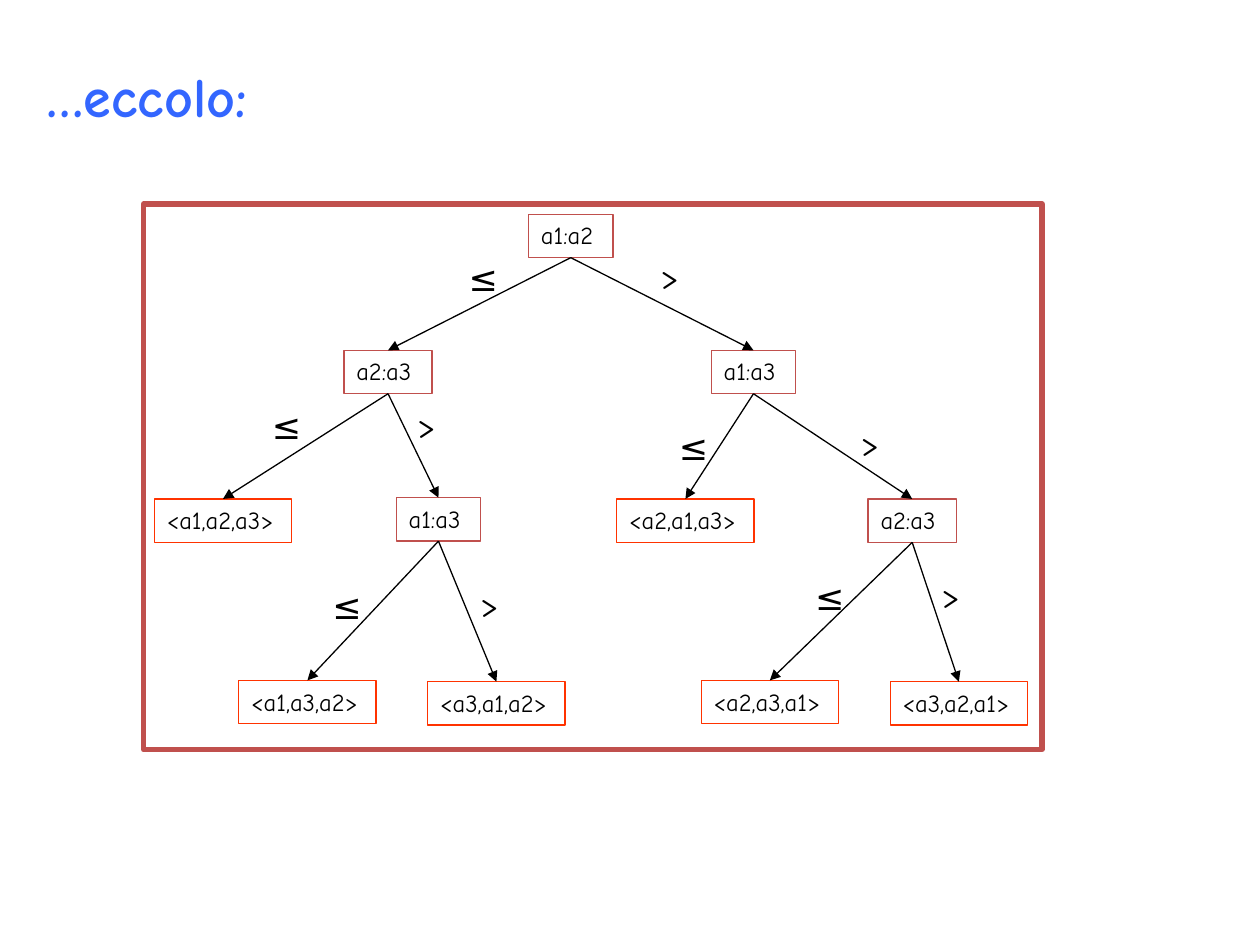
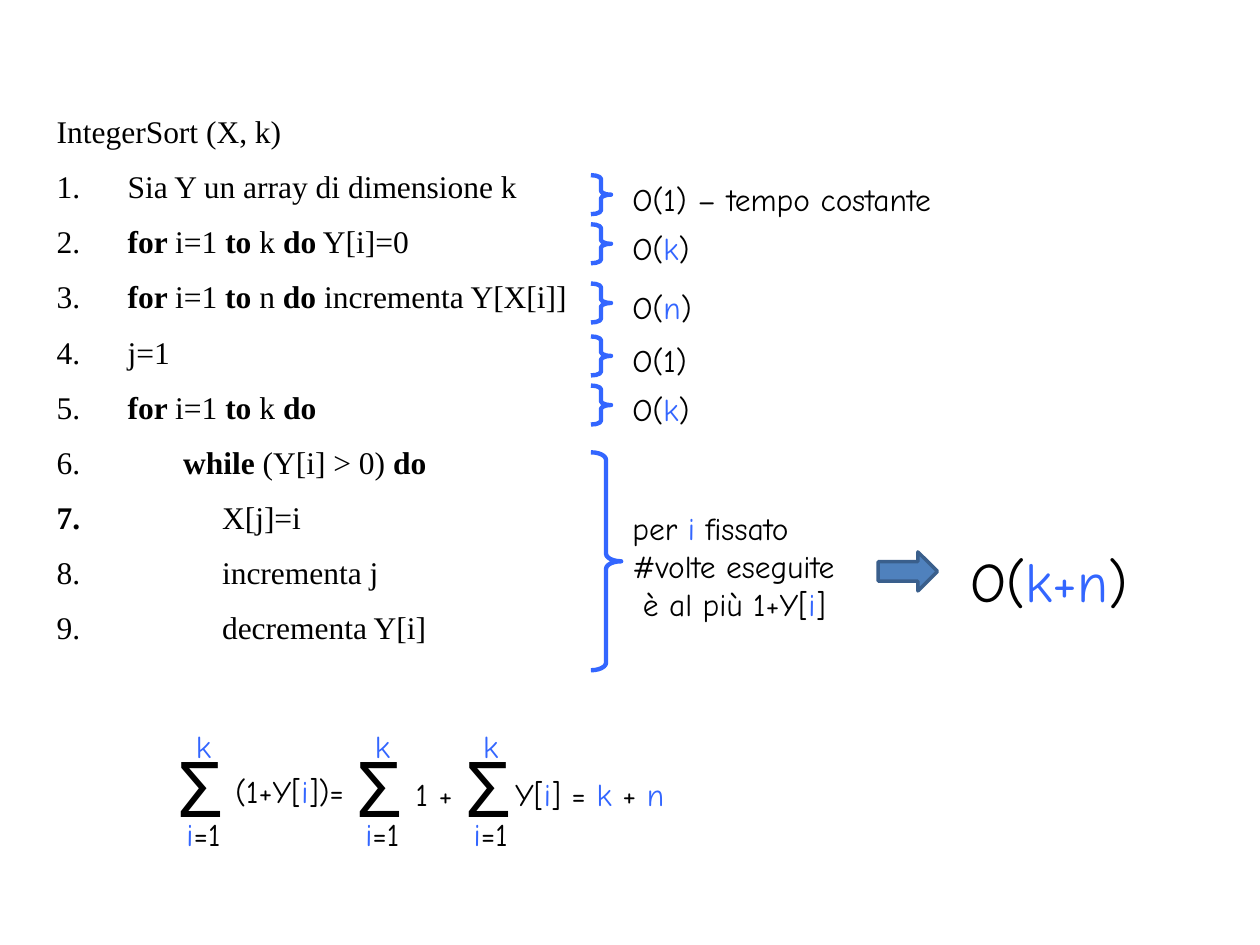
from dataclasses import dataclass

from lxml.etree import SubElement
from pptx import Presentation
from pptx.dml.color import RGBColor
from pptx.enum.shapes import MSO_CONNECTOR, MSO_SHAPE
from pptx.enum.text import MSO_ANCHOR, MSO_AUTO_SIZE, PP_ALIGN
from pptx.oxml.ns import qn
from pptx.util import Inches, Pt

# Places and sizes are columns and rows of a 100 x 75 grid.
CELL = Inches(0.1)
COLUMNS, ROWS = 100, 75

COLORS = {
    "text": "000000",
    "paper": "FFFFFF",
    "accent": "3366FF",
    "frame": "C0504D",
    "leaf": "FF3300",
    "arrow": "4F81BD",
    "arrow edge": "3A5F8C",
}
HAND_FONT, CODE_FONT = "Comic Neue", "Times New Roman"
TITLE_ONLY, TITLE_AND_BODY = 5, 1
BOTTOM, TOP = 2, 0
NODE_HEIGHT = 3.45


@dataclass(frozen=True)
class Node:
    text: str
    center: float
    row: float

    @property
    def is_leaf(self) -> bool:
        return self.text.startswith("<")

    @property
    def width(self) -> float:
        if self.is_leaf:
            return 10.9
        return 7.0 if self.text.startswith("a2") else 6.7


@dataclass(frozen=True)
class Branch:
    parent: str
    child: str
    sign: str
    column: float
    row: float


@dataclass(frozen=True)
class Step:
    text: str
    indent: float = 0.5
    bold_number: bool = False


@dataclass(frozen=True)
class Cost:
    text: str
    row: float


# Keys spell the way down the tree: L for ≤, R for >.
NODES = {
    "": Node("a1:a2", 45.3, 17.0),
    "L": Node("a2:a3", 30.8, 27.8),
    "R": Node("a1:a3", 59.8, 27.8),
    "LL": Node("<a1,a2,a3>", 17.7, 39.6),
    "LR": Node("a1:a3", 34.8, 39.5),
    "RL": Node("<a2,a1,a3>", 54.4, 39.6),
    "RR": Node("a2:a3", 72.4, 39.6),
    "LRL": Node("<a1,a3,a2>", 24.4, 54.0),
    "LRR": Node("<a3,a1,a2>", 39.4, 54.1),
    "RRL": Node("<a2,a3,a1>", 61.1, 54.0),
    "RRR": Node("<a3,a2,a1>", 76.1, 54.1),
}
BRANCHES = [
    Branch("", "L", "≤", 36.2, 19.9),
    Branch("", "R", ">", 51.4, 19.7),
    Branch("L", "LL", "≤", 20.6, 31.6),
    Branch("L", "LR", ">", 32.1, 31.5),
    Branch("R", "RL", "≤", 52.9, 33.3),
    Branch("R", "RR", ">", 67.3, 33.0),
    Branch("LR", "LRL", "≤", 25.4, 45.9),
    Branch("LR", "LRR", ">", 37.1, 45.7),
    Branch("RR", "RRL", "≤", 63.7, 45.2),
    Branch("RR", "RRR", ">", 73.7, 45.0),
]

STEPS = [
    Step("Sia Y un array di dimensione k"),
    Step("|for |i=1 |to| k |do| Y[i]=0"),
    Step("|for |i=1| to |n| do |incrementa Y[X[i]]"),
    Step("j=1"),
    Step("|for |i=1 |to| k |do"),
    Step("|while| (Y[i] > 0) |do", indent=0.94),
    Step("X[j]=i", indent=1.25, bold_number=True),
    Step("incrementa j", indent=1.25),
    Step("decrementa Y[i]", indent=1.25),
]
COSTS = [
    Cost("O(1) – tempo costante", 13.9),
    Cost("O(|k|)", 17.8),
    Cost("O(|n|)", 22.5),
    Cost("O(1)", 26.7),
    Cost("O(|k|)", 30.6),
]
SUM_COLUMNS = [13.0, 27.2, 35.8]


def grid(*cells: float) -> list[int]:
    return [round(cell * CELL) for cell in cells]


def rgb(name: str) -> RGBColor:
    return RGBColor.from_string(COLORS[name])


def write(para, text: str, *, size: float = 18, font: str = HAND_FONT,
          bold: bool = False, color: str = "text", marked: str = "color") -> None:
    """Add text to a paragraph; pieces between bars are marked by accent color or by bold."""
    for index, piece in enumerate(text.split("|")):
        if not piece:
            continue
        is_marked = index % 2 == 1
        span = para.add_run()
        span.text = piece
        span.font.name, span.font.size = font, Pt(size)
        span.font.bold = bold or (is_marked and marked == "bold")
        span.font.color.rgb = rgb("accent" if is_marked and marked == "color" else color)


def fill_frame(frame, text: str, *, align=PP_ALIGN.LEFT, wrap: bool = False, **style) -> None:
    frame.word_wrap = wrap
    frame.auto_size = MSO_AUTO_SIZE.SHAPE_TO_FIT_TEXT
    frame.vertical_anchor = MSO_ANCHOR.TOP
    for index, line in enumerate(text.split("\n")):
        para = frame.add_paragraph() if index else frame.paragraphs[0]
        para.alignment = align
        write(para, line, **style)


def add_label(page, text: str, column: float, row: float, width: float,
              height: float = 4, **style) -> None:
    box = page.shapes.add_textbox(*grid(column, row, width, height))
    fill_frame(box.text_frame, text, **style)


def add_outline(page, kind, column: float, row: float, width: float, height: float,
                *, line: str, weight: float, fill: str = ""):
    shape = page.shapes.add_shape(kind, *grid(column, row, width, height))
    shape.shadow.inherit = False
    if fill:
        shape.fill.solid()
        shape.fill.fore_color.rgb = rgb(fill)
    else:
        shape.fill.background()
    shape.line.color.rgb = rgb(line)
    shape.line.width = Pt(weight)
    return shape


def add_node(page, node: Node):
    box = add_outline(page, MSO_SHAPE.RECTANGLE, node.center - node.width / 2, node.row,
                      node.width, NODE_HEIGHT, line="leaf" if node.is_leaf else "frame",
                      weight=0.75)
    fill_frame(box.text_frame, node.text, size=14)
    return box


def add_arrow(page, parent, child) -> None:
    arrow = page.shapes.add_connector(MSO_CONNECTOR.STRAIGHT, 0, 0, 0, 0)
    arrow.begin_connect(parent, BOTTOM)
    arrow.end_connect(child, TOP)
    arrow.line.color.rgb = rgb("text")
    arrow.line.width = Pt(0.75)
    SubElement(arrow.line._get_or_add_ln(), qn("a:tailEnd"), type="triangle")
    SubElement(arrow._element.spPr, qn("a:effectLst"))


def add_brace(page, row: float, width: float, height: float, curve: float) -> None:
    brace = add_outline(page, MSO_SHAPE.RIGHT_BRACE, 46.9, row, width, height,
                        line="accent", weight=2.5)
    brace.adjustments[0] = curve


def add_sum(page, column: float) -> None:
    add_label(page, "Σ", column + 0.2, 58.3, 5.5, 8.4, size=44, wrap=True)
    for text, row in (("|i|=1", 64.2), ("|k|", 57.2)):
        add_label(page, text, column, row, 6.3, align=PP_ALIGN.CENTER, wrap=True)


def place(placeholder, column: float, row: float, width: float, height: float) -> None:
    (placeholder.left, placeholder.top,
     placeholder.width, placeholder.height) = grid(column, row, width, height)


def write_code(frame, heading: str, steps: list[Step]) -> None:
    frame.word_wrap = True
    frame.auto_size = MSO_AUTO_SIZE.NONE
    for index, step in enumerate([Step(heading, indent=0), *steps]):
        para = frame.add_paragraph() if index else frame.paragraphs[0]
        para.space_before = Pt(9.9)
        properties = para._p.get_or_add_pPr()
        properties.set("marL", str(Inches(step.indent)))
        properties.set("indent", str(-Inches(step.indent)))
        if index:
            SubElement(properties, qn("a:buFont"), typeface="+mj-lt")
            SubElement(properties, qn("a:buAutoNum"), type="arabicPeriod")
            write(para, " ", font=CODE_FONT, bold=step.bold_number)
        else:
            SubElement(properties, qn("a:buNone"))
        write(para, step.text, font=CODE_FONT, marked="bold")


def build_decision_tree(deck) -> None:
    page = deck.slides.add_slide(deck.slide_layouts[TITLE_ONLY])
    title = page.shapes.title
    place(title, 2.7, 4.4, 20.1, 6.4)
    fill_frame(title.text_frame, "…eccolo:", size=32, bold=True, color="accent")

    add_outline(page, MSO_SHAPE.RECTANGLE, 11.4, 16.2, 71.3, 43.3,
                line="frame", weight=3, fill="paper")
    boxes = {way: add_node(page, node) for way, node in NODES.items()}
    for branch in BRANCHES:
        add_arrow(page, boxes[branch.parent], boxes[branch.child])
        add_label(page, branch.sign, branch.column, branch.row, 3.5, 4.3, size=20)


def build_integer_sort(deck) -> None:
    page = deck.slides.add_slide(deck.slide_layouts[TITLE_AND_BODY])
    title, body = page.placeholders
    title._element.getparent().remove(title._element)
    place(body, 3.5, 8.4, 43.3, 44.9)
    write_code(body.text_frame, "IntegerSort (X, k)", STEPS)

    for cost in COSTS:
        add_brace(page, cost.row, 1.6, 3.1, 0.19)
        add_label(page, cost.text, 49.2, cost.row - 0.1, 27.9 if "–" in cost.text else 7.3)
    add_brace(page, 35.9, 2.4, 17.3, 0.25)
    add_label(page, "per |i |fissato\n#volte eseguite\n è al più 1+Y[|i|]",
              49.2, 39.9, 21.4, 10.1)
    add_outline(page, MSO_SHAPE.RIGHT_ARROW, 69.7, 43.8, 4.7, 3.1,
                line="arrow edge", weight=2, fill="arrow")
    add_label(page, "O(|k+n|)", 76, 42.9, 15.8, 6.4, size=32)

    for column in SUM_COLUMNS:
        add_sum(page, column)
    add_label(page, "(1+Y[|i|])=", 17.7, 60.8, 11.7)
    add_label(page, "1 +", 32, 61, 5.8)
    add_label(page, "Y[|i|] = |k| + |n|", 39.9, 61, 14.4)


def main() -> None:
    deck = Presentation()
    deck.slide_width, deck.slide_height = grid(COLUMNS, ROWS)
    build_decision_tree(deck)
    build_integer_sort(deck)
    deck.save("out.pptx")


if __name__ == "__main__":
    main()
